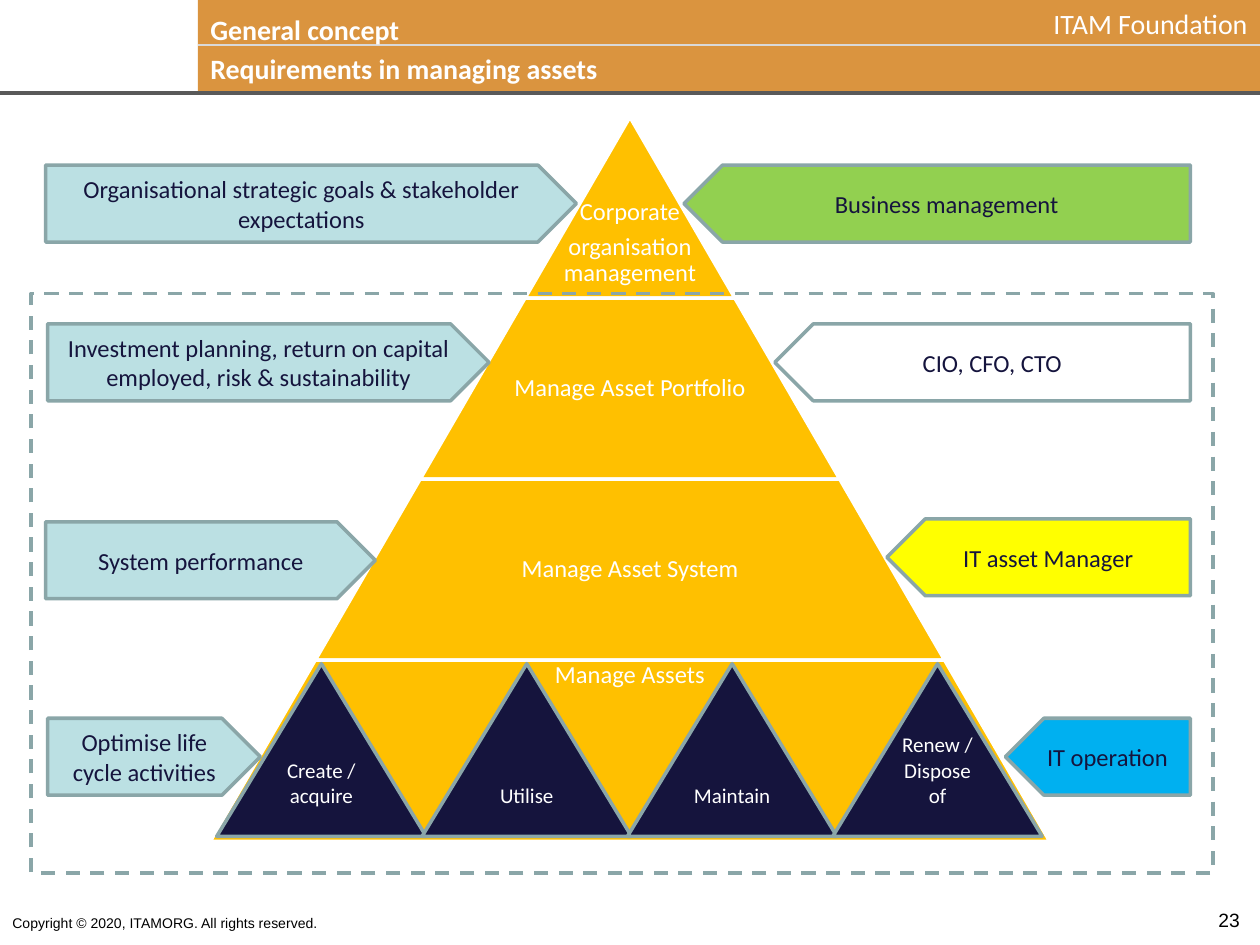
from lxml import etree
from pptx import Presentation
from pptx.dml.color import RGBColor
from pptx.enum import dml, shapes, text
from pptx.oxml.ns import qn
from pptx.util import Cm, Pt

NAVY, WHITE, BLACK = "15143D", "FFFFFF", "000000"
GOLD, ORANGE, PALE, EDGE = "FFC000", "DA943F", "BBE0E3", "8AA6A8"
MSO = shapes.MSO_SHAPE
ANCHOR, ALIGN = text.MSO_ANCHOR, text.PP_ALIGN


def rgb(value):
    return RGBColor.from_string(value)


def write(sp, *lines, size=14, color=WHITE, bold=False, font="Calibri",
          align=ALIGN.CENTER, anchor=ANCHOR.MIDDLE, inset=None, bottom=None,
          spacing=None, after=0):
    """Fill a shape with one paragraph per line; insets are in cm."""
    tf = sp.text_frame
    tf.word_wrap = True
    tf.vertical_anchor = anchor
    if inset is not None:
        tf.margin_left = tf.margin_right = Cm(inset)
        tf.margin_top = tf.margin_bottom = Cm(inset)
    if bottom is not None:
        tf.margin_bottom = Cm(bottom)
    for i, line in enumerate(lines):
        p = tf.add_paragraph() if i else tf.paragraphs[0]
        p.alignment = align
        p.space_after = Pt(after)
        if spacing:
            p.line_spacing = spacing
        r = p.add_run()
        r.text = line
        r.font.name, r.font.size, r.font.bold = font, Pt(size), bold
        r.font.color.rgb = rgb(color)


def add_text(s, x, y, w, h, *lines, **fmt):
    write(s.shapes.add_textbox(Cm(x), Cm(y), Cm(w), Cm(h)), *lines, **fmt)


def add_shape(s, kind, x, y, w, h, fill=None, line=None):
    sp = s.shapes.add_shape(kind, Cm(x), Cm(y), Cm(w), Cm(h))
    sp.shadow.inherit = False
    if fill:
        sp.fill.solid()
        sp.fill.fore_color.rgb = rgb(fill)
    else:
        sp.fill.background()
    if line:
        sp.line.color.rgb = rgb(line)
        sp.line.width = Pt(2)
    else:
        sp.line.fill.background()
    return sp


def add_rule(s, x, y, w, color, width):
    c = s.shapes.add_connector(shapes.MSO_CONNECTOR.STRAIGHT,
                               Cm(x), Cm(y), Cm(x + w), Cm(y))
    c.line.color.rgb = rgb(color)
    c.line.width = Pt(width)
    etree.SubElement(c._element.spPr, qn("a:effectLst"))


def header(s, x, w, h):
    add_shape(s, MSO.RECTANGLE, x, 0, w, h, ORANGE)
    add_rule(s, 0, h + 0.02, x + w, "595959", 2.25)
    add_rule(s, x, 0.91, w, "D9D9D9", 0.75)
    add_text(s, x + w - 6.07, 0, 6.07, 0.94, "ITAM Foundation", size=16,
             align=ALIGN.RIGHT, anchor=ANCHOR.TOP)
    for y, title in ((0.12, "General concept"),
                     (0.92, "Requirements in managing assets")):
        add_text(s, x, y, 17.5, 0.74, title, size=16, bold=True,
                 align=ALIGN.LEFT, anchor=ANCHOR.TOP)


def footer(s, y):
    fmt = dict(font="Arial", color=BLACK, anchor=ANCHOR.TOP)
    add_text(s, 0, y + 0.12, 12.07, 0.6,
             "Copyright © 2020, ITAMORG. All rights reserved.",
             size=8, align=ALIGN.LEFT, **fmt)
    add_text(s, 24.03, y, 1.5, 0.86, "23", size=11, **fmt)


def pyramid(s, center, y, step, h):
    """Stack tiers that each grow by step in width, then the life cycle."""
    tiers = [
        (("Corporate", "organisation management"), ANCHOR.BOTTOM, 1, 0.22),
        (("Manage Asset Portfolio",), ANCHOR.MIDDLE, 0.65, None),
        (("Manage Asset System",), ANCHOR.MIDDLE, 0.65, None),
        (("Manage Assets",), ANCHOR.TOP, 0.65, None),
    ]
    for i, (lines, anchor, share, bottom) in enumerate(tiers):
        w, top = step * (i + 1), y + h * i
        tier = add_shape(s, MSO.TRAPEZOID, center - w / 2, top, w, h,
                         GOLD, WHITE)
        tier.adjustments[0] = step / 2 / h
        add_text(s, center - w * share / 2, top, w * share, h, *lines,
                 anchor=anchor, inset=0.05, bottom=bottom,
                 spacing=0.9, after=5)
    life_cycle(s, center - 2 * step + 0.13, y + 3 * h + 0.07, 4.14, h - 0.17)


def life_cycle(s, x, y, pitch, h):
    stages = ["Create / acquire", "Utilise", "Maintain", "Renew / Dispose of"]
    for i, stage in enumerate(stages):
        sp = add_shape(s, MSO.ISOSCELES_TRIANGLE, x + i * pitch, y,
                       pitch + 0.08, h, NAVY, EDGE)
        write(sp, stage, size=12, anchor=ANCHOR.BOTTOM, bottom=0.58)


def arrow(s, x, y, w, label, fill, flip=False):
    sp = add_shape(s, MSO.PENTAGON, x, y, w, 1.55, fill, EDGE)
    if flip:
        sp._element.spPr.xfrm.set("flipH", "1")
    write(sp, label, color=NAVY)


def goals(s, x):
    for dx, y, w, label in (
        (0, 3.33, 10.7, "Organisational strategic goals & stakeholder expectations"),
        (0.04, 6.53, 8.9, "Investment planning, return on capital employed, "
                          "risk & sustainability"),
        (0, 10.52, 6.65, "System performance"),
        (0.04, 14.48, 4.29, "Optimise life cycle activities"),
    ):
        arrow(s, x + dx, y, w, label, PALE)


def roles(s, right):
    for y, w, label, fill in (
        (3.33, 10.21, "Business management", "92D050"),
        (6.53, 8.38, "CIO, CFO, CTO", WHITE),
        (10.46, 6.12, "IT asset Manager", "FFFF00"),
        (14.48, 3.73, "IT operation", "00B0F0"),
    ):
        arrow(s, right - w, y, w, label, fill, flip=True)


def main():
    prs = Presentation()
    prs.slide_width, prs.slide_height = Cm(25.4), Cm(19.05)
    s = prs.slides.add_slide(prs.slide_layouts[6])
    footer(s, 18.19)
    header(s, 3.99, 21.41, 1.86)
    pyramid(s, 12.7, 2.36, 4.23, 3.65)
    goals(s, 0.92)
    scope = add_shape(s, MSO.RECTANGLE, 0.63, 5.92, 23.82, 11.68, line=EDGE)
    scope.line.dash_style = dml.MSO_LINE.DASH
    roles(s, 24)
    prs.save("out.pptx")


if __name__ == "__main__":
    main()
